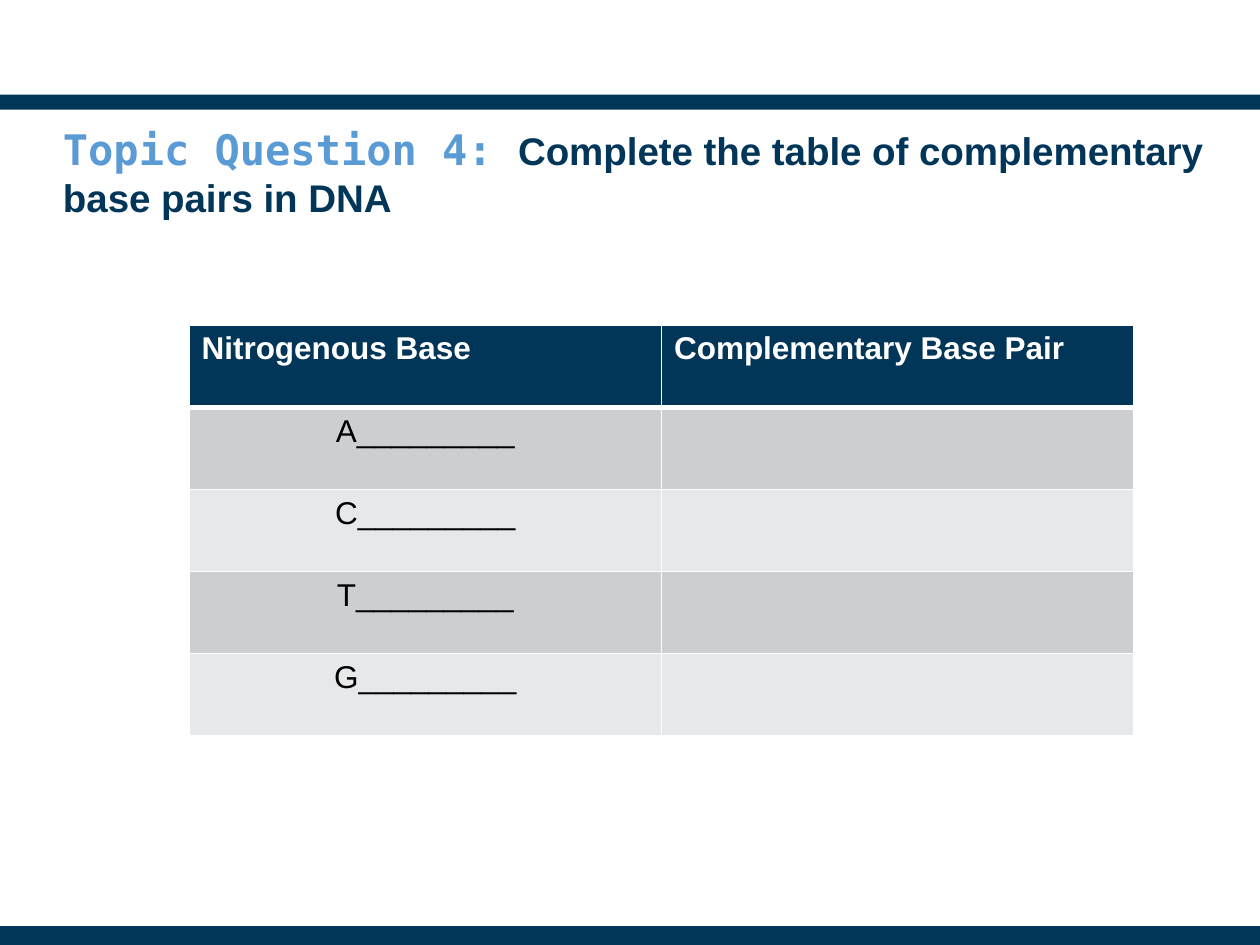
from lxml import etree
from pptx import Presentation
from pptx.dml.color import RGBColor
from pptx.enum.shapes import MSO_SHAPE
from pptx.enum.text import MSO_ANCHOR, PP_ALIGN
from pptx.oxml.ns import qn
from pptx.util import Inches, Pt

RECT = MSO_SHAPE.RECTANGLE
TOP = MSO_ANCHOR.TOP
LEFT, CENTER = PP_ALIGN.LEFT, PP_ALIGN.CENTER
NAVY, BLUE, WHITE, BLACK = "013658", "5B9BD5", "FFFFFF", "000000"
BANDS = ("CCCED1", "E7E8EA")
HEADINGS = ("Nitrogenous Base", "Complementary Base Pair")
BASES = "ACTG"


def rgb(value):
    """Return the colour for a hex string."""
    return RGBColor.from_string(value)


def add_text(p, text, size=18, font="Arial", color=BLACK, bold=False, align=LEFT):
    """Add a formatted run to a paragraph."""
    p.alignment = align
    r = p.add_run()
    r.text = text
    r.font.size, r.font.name, r.font.bold = Pt(size), font, bold
    r.font.color.rgb = rgb(color)


def add_bar(s, x, y, w, h):
    """Draw a navy bar."""
    sp = s.shapes.add_shape(RECT, Inches(x), Inches(y), Inches(w), Inches(h))
    sp.shadow.inherit = False
    sp.fill.solid()
    sp.fill.fore_color.rgb = rgb(NAVY)
    sp.line.fill.background()


def add_title(s, x, y, w, h):
    """Write the question with its coloured label."""
    tf = s.shapes.add_textbox(Inches(x), Inches(y), Inches(w), Inches(h)).text_frame
    tf.word_wrap = True
    tf.vertical_anchor = TOP
    tf.margin_left = tf.margin_top = tf.margin_right = tf.margin_bottom = 0
    p = tf.paragraphs[0]
    add_text(p, "Topic Question 4: ", size=24, font="DejaVu Sans Mono",
             color=BLUE, bold=True)
    add_text(p, "Complete the table of complementary base pairs in DNA",
             size=22, color=NAVY, bold=True)


def style_cell(cell, fill, top=1, bottom=1):
    """Give a cell white borders and a solid fill."""
    tc_pr = cell._tc.get_or_add_tcPr()
    for side, width in (("L", 1), ("R", 1), ("T", top), ("B", bottom)):
        ln = etree.SubElement(tc_pr, qn(f"a:ln{side}"), w=str(Pt(width)))
        solid = etree.SubElement(ln, qn("a:solidFill"))
        etree.SubElement(solid, qn("a:srgbClr"), val=WHITE)
    cell.fill.solid()
    cell.fill.fore_color.rgb = rgb(fill)


def add_base_table(s, x, y, w, h):
    """Build the base pair table with blanks to complete."""
    rows, cols = len(BASES) + 1, len(HEADINGS)
    table = s.shapes.add_table(rows, cols, Inches(x), Inches(y),
                               Inches(w), Inches(h)).table
    for col, heading in enumerate(HEADINGS):
        cell = table.cell(0, col)
        style_cell(cell, NAVY, bottom=3)
        add_text(cell.text_frame.paragraphs[0], heading, color=WHITE, bold=True)
    for row, base in enumerate(BASES, 1):
        for col in range(cols):
            style_cell(table.cell(row, col), BANDS[(row - 1) % 2],
                       top=3 if row == 1 else 1)
        add_text(table.cell(row, 0).text_frame.paragraphs[0],
                 base + "_" * 9, align=CENTER)


def main():
    """Build and save the slide."""
    prs = Presentation()
    prs.slide_width, prs.slide_height = Inches(10), Inches(7.5)
    s = prs.slides.add_slide(prs.slide_layouts[6])
    add_bar(s, 0, 0.75, 10, 0.12)
    add_bar(s, 0, 7.35, 10, 0.15)
    add_base_table(s, 1.5, 2.58, 7.5, 3.26)
    add_title(s, 0.5, 0.98, 9.33, 0.75)
    prs.save("out.pptx")


if __name__ == "__main__":
    main()
